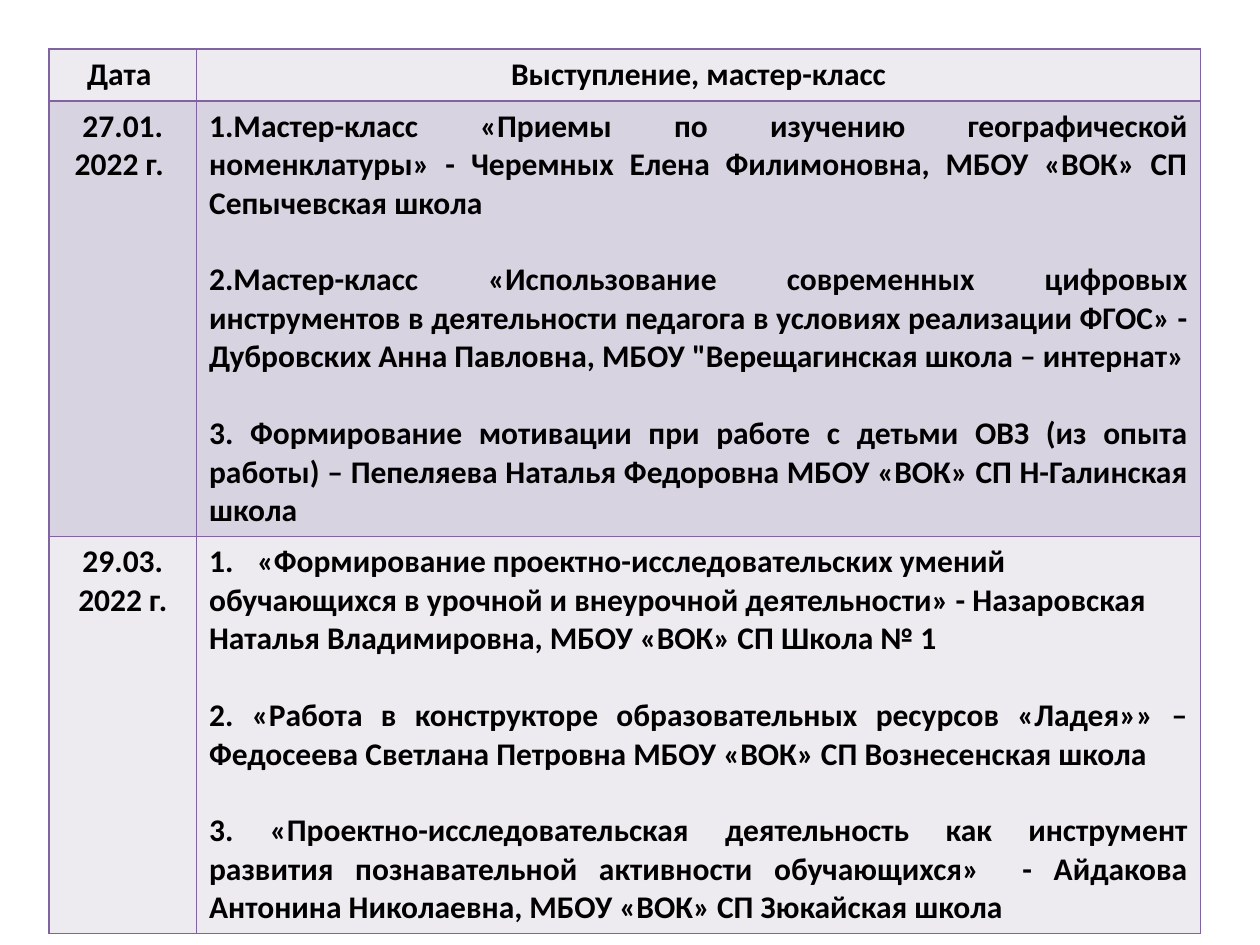
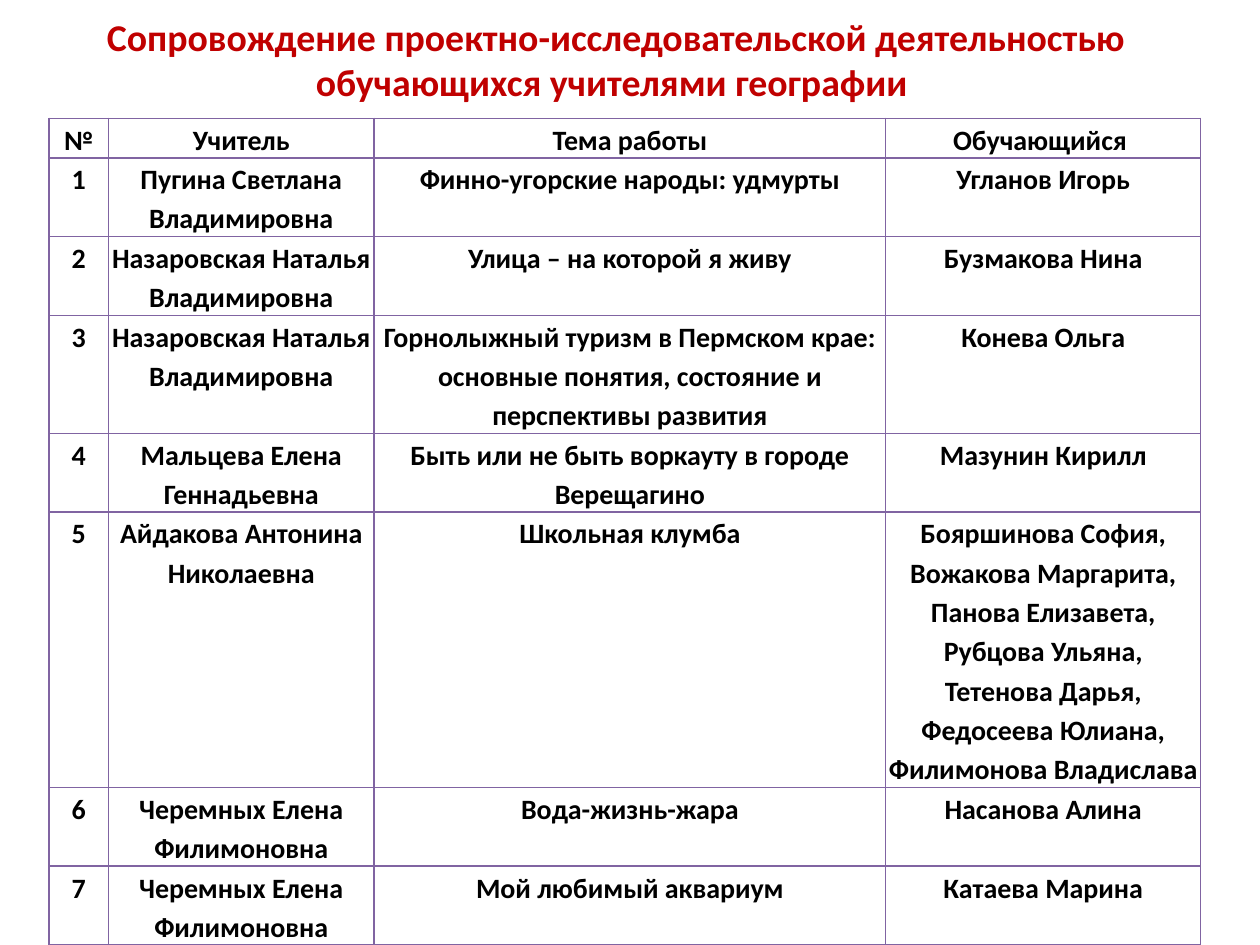
from lxml import etree
from pptx import Presentation
from pptx.dml.color import RGBColor
from pptx.enum.text import MSO_ANCHOR, MSO_AUTO_SIZE, PP_ALIGN
from pptx.oxml.ns import qn
from pptx.util import Inches, Pt

CENTER, JUSTIFY = PP_ALIGN.CENTER, PP_ALIGN.JUSTIFY
MIDDLE = MSO_ANCHOR.MIDDLE
NO_AUTOFIT = MSO_AUTO_SIZE.NONE
TITLE_ONLY, BLANK = 5, 6

FONT = "Calibri"
COLORS = {
    "text": "000000",
    "title": "C00000",
    "border": "8064A2",
    "light": "EDEAF0",
    "dark": "D8D3E0",
}
TABLE_LEFT, TABLE_WIDTH = 0.39, 9.14


def format_text(frame, size, color, align=CENTER):
    for para in frame.paragraphs:
        para.alignment = align
        for span in para.runs:
            span.font.name = FONT
            span.font.size = Pt(size)
            span.font.bold = True
            span.font.color.rgb = RGBColor.from_string(COLORS[color])


def add_bordered_table(page, top, widths, heights, rows, size):
    """Fill a table with centred bold text and outline every cell."""
    frame = page.shapes.add_table(
        len(rows), len(widths), Inches(TABLE_LEFT), Inches(top),
        Inches(TABLE_WIDTH), Inches(sum(heights)))
    table = frame.table
    for column, width in zip(table.columns, widths):
        column.width = Inches(width)
    for row, height, texts in zip(table.rows, heights, rows):
        row.height = Inches(height)
        for cell, text in zip(row.cells, texts):
            cell.text_frame.text = text
            format_text(cell.text_frame, size, "text")
            cell.fill.background()
            properties = cell._tc.get_or_add_tcPr()
            for position, side in enumerate(("lnL", "lnR", "lnT", "lnB")):
                line = etree.Element(qn(f"a:{side}"), w=str(Pt(1)))
                fill = etree.SubElement(line, qn("a:solidFill"))
                etree.SubElement(fill, qn("a:srgbClr"), val=COLORS["border"])
                properties.insert(position, line)
    return table


deck = Presentation()
deck.slide_width, deck.slide_height = Inches(10), Inches(7.5)

# Slide 1: talks and master classes
january_talks = [
    "1.Мастер-класс «Приемы по изучению географической номенклатуры» - "
    "Черемных Елена Филимоновна, МБОУ «ВОК» СП Сепычевская школа",
    "2.Мастер-класс «Использование современных цифровых инструментов в "
    "деятельности педагога в условиях реализации ФГОС» - Дубровских Анна "
    "Павловна, МБОУ \"Верещагинская школа – интернат»",
    "3. Формирование мотивации при работе с детьми ОВЗ (из опыта работы) – "
    "Пепеляева Наталья Федоровна МБОУ «ВОК» СП Н-Галинская школа",
]
march_talks = [
    "«Формирование проектно-исследовательских умений",
    "обучающихся в урочной и внеурочной деятельности» - Назаровская",
    "Наталья Владимировна, МБОУ «ВОК» СП Школа № 1",
    "2. «Работа в конструкторе образовательных ресурсов «Ладея»» – "
    "Федосеева Светлана Петровна МБОУ «ВОК» СП Вознесенская школа",
    "3. «Проектно-исследовательская деятельность как инструмент развития "
    "познавательной активности обучающихся»  - Айдакова Антонина "
    "Николаевна, МБОУ «ВОК» СП Зюкайская школа",
]
talk_rows = [
    ("Дата ", "Выступление, мастер-класс"),
    ("27.01.\n2022 г. ", "\n".join(january_talks)),
    ("29.03.\n2022 г.", "\n".join(march_talks)),
]

page = deck.slides.add_slide(deck.slide_layouts[BLANK])
talks = add_bordered_table(page, 0.39, [1.17, 7.97], [0.41, 3.4, 3.1],
                           talk_rows, 18)
for row, color in zip(talks.rows, ("light", "dark", "light")):
    for cell in row.cells:
        cell.fill.solid()
        cell.fill.fore_color.rgb = RGBColor.from_string(COLORS[color])

for row_index in (1, 2):
    talk_frame = talks.cell(row_index, 1).text_frame
    format_text(talk_frame, 18, "text", JUSTIFY)
    for para in talk_frame.paragraphs:
        if para.text.startswith(("2.", "3.")):
            para.space_before = Pt(22)

numbered = talks.cell(2, 1).text_frame.paragraphs[0]._p.get_or_add_pPr()
numbered.set("marL", str(Inches(0.38)))
numbered.set("indent", str(-Inches(0.38)))
etree.SubElement(numbered, qn("a:buFont"), typeface="+mj-lt")
etree.SubElement(numbered, qn("a:buAutoNum"), type="arabicPeriod")

# Slide 2: pupils' projects
project_rows = [
    ("№", "Учитель", "Тема работы", "Обучающийся "),
    ("1", "Пугина Светлана Владимировна", "Финно-угорские народы: удмурты",
     "Угланов Игорь"),
    ("2", "Назаровская Наталья Владимировна", "Улица – на которой я живу",
     "Бузмакова Нина"),
    ("3", "Назаровская Наталья Владимировна",
     "Горнолыжный туризм в Пермском крае: основные понятия, состояние и "
     "перспективы развития", "Конева Ольга"),
    ("4", "Мальцева Елена Геннадьевна",
     "Быть или не быть воркауту в городе Верещагино", "Мазунин Кирилл"),
    ("5", "Айдакова Антонина Николаевна", "Школьная клумба",
     "Бояршинова София, Вожакова Маргарита, Панова Елизавета, "
     "Рубцова Ульяна, Тетенова Дарья, Федосеева Юлиана, "
     "Филимонова Владислава"),
    ("6", "Черемных Елена Филимоновна", "Вода-жизнь-жара", "Насанова Алина"),
    ("7", "Черемных Елена Филимоновна", "Мой любимый аквариум",
     "Катаева Марина"),
]
lines_per_row = [1, 2, 2, 3, 2, 7, 2, 2]

page = deck.slides.add_slide(deck.slide_layouts[TITLE_ONLY])
title = page.shapes.title
title.left, title.top = Inches(0.39), Inches(0.23)
title.width, title.height = Inches(9), Inches(0.47)
title.text_frame.text = ("Сопровождение проектно-исследовательской "
                         "деятельностью обучающихся учителями географии ")
title.text_frame.auto_size = NO_AUTOFIT
title.text_frame.vertical_anchor = MIDDLE
format_text(title.text_frame, 21.6, "title")

projects = add_bordered_table(page, 0.94, [0.47, 2.11, 4.06, 2.5],
                              [0.31 * lines for lines in lines_per_row],
                              project_rows, 16)
for cell in projects.iter_cells():
    cell.margin_left = cell.margin_right = Inches(0.02)
    cell.margin_top = cell.margin_bottom = 0
    cell.text_frame.paragraphs[0].line_spacing = 1.15

deck.save("out.pptx")
